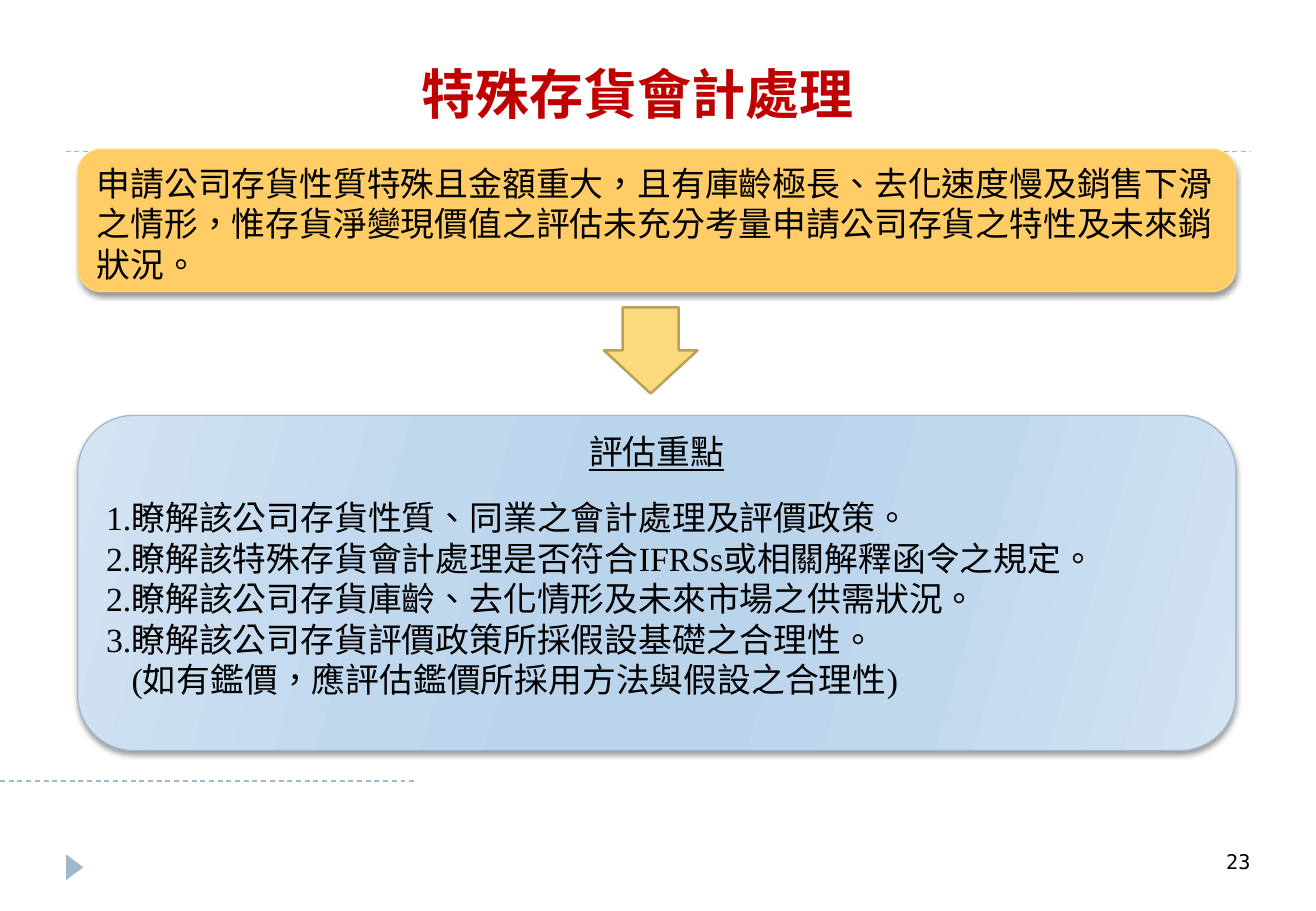
from lxml import etree
from pptx import Presentation
from pptx.dml.color import RGBColor
from pptx.enum.dml import MSO_LINE
from pptx.enum.shapes import MSO_CONNECTOR, MSO_SHAPE
from pptx.enum.text import MSO_ANCHOR, PP_ALIGN
from pptx.oxml import parse_xml
from pptx.oxml.ns import qn
from pptx.util import Inches, Pt

LEFT, CENTER, RIGHT = PP_ALIGN.LEFT, PP_ALIGN.CENTER, PP_ALIGN.RIGHT
TOP, MIDDLE = MSO_ANCHOR.TOP, MSO_ANCHOR.MIDDLE
DASH = MSO_LINE.DASH
STRAIGHT = MSO_CONNECTOR.STRAIGHT
ROUNDED, DOWN_ARROW = MSO_SHAPE.ROUNDED_RECTANGLE, MSO_SHAPE.DOWN_ARROW
TRIANGLE = MSO_SHAPE.ISOSCELES_TRIANGLE

BLACK = RGBColor(0x00, 0x00, 0x00)
RED = RGBColor(0xC0, 0x00, 0x00)
ORANGE = RGBColor(0xFF, 0xCC, 0x66)
YELLOW = RGBColor(0xFA, 0xDA, 0x7A)
BROWN = RGBColor(0xB9, 0xA1, 0x5A)
BLUE = RGBColor(0x9F, 0xB8, 0xCD)
PALE_BLUE = RGBColor(0xD3, 0xE3, 0xF2)
LIGHT_BLUE = RGBColor(0xC0, 0xD8, 0xEE)
MID_BLUE = RGBColor(0xBA, 0xD4, 0xEC)

SANS, SERIF = "Noto Sans CJK SC", "Times New Roman"
NS = 'xmlns:a="http://schemas.openxmlformats.org/drawingml/2006/main"'
SHADOW = (f'<a:effectLst {NS}><a:outerShdw blurRad="38100" dist="25400" '
          'dir="5400000" rotWithShape="0"><a:srgbClr val="000000">'
          '<a:alpha val="40000"/></a:srgbClr></a:outerShdw></a:effectLst>')


def add_text(p, text, font=SANS, size=20, color=BLACK, bold=False,
             underline=False, align=LEFT, spacing=None, after=0, indent=0):
    p.alignment = align
    p.space_after = Pt(after)
    if spacing:
        p.line_spacing = Pt(spacing)
    if indent:
        p._p.get_or_add_pPr().set("marL", str(Inches(indent)))
    r = p.add_run()
    r.text = text
    r.font.name, r.font.size = font, Pt(size)
    r.font.bold, r.font.underline = bold, underline
    r.font.color.rgb = color
    rPr = r._r.get_or_add_rPr()
    rPr.set("lang", "zh-TW")
    etree.SubElement(rPr, qn("a:ea")).set("typeface", SANS)


def add_shape(kind, left, top, width, height, fill, line=None, line_width=0.75):
    sp = s.shapes.add_shape(kind, Inches(left), Inches(top), Inches(width), Inches(height))
    sp.shadow.inherit = False
    sp.fill.solid()
    sp.fill.fore_color.rgb = fill
    if line is None:
        sp.line.fill.background()
    else:
        sp.line.color.rgb = line
        sp.line.width = Pt(line_width)
    return sp


prs = Presentation()
prs.slide_width, prs.slide_height = Inches(10.83), Inches(7.5)
s = prs.slides.add_slide(prs.slide_layouts[5])

for x1, x2, y in [(0, 3.43, 6.43), (0.54, 10.29, 1.25)]:
    rule = s.shapes.add_connector(STRAIGHT, Inches(x1), Inches(y), Inches(x2), Inches(y))
    rule.line.color.rgb = BLUE
    rule.line.width = Pt(0.75)
    rule.line.dash_style = DASH
    etree.SubElement(rule._element.spPr, qn("a:effectLst"))

marker = add_shape(TRIANGLE, 0.51, 7.07, 0.21, 0.14, BLUE)
marker.rotation = 90

title = s.shapes.title
title.left, title.top = Inches(0.53), Inches(0.29)
title.width, title.height = Inches(9.43), Inches(0.95)
title.text_frame.vertical_anchor = MIDDLE
add_text(title.text_frame.paragraphs[0], "特殊存貨會計處理",
         font="TeX Gyre Bonum", size=32, color=RED, bold=True, align=CENTER)

issue = add_shape(ROUNDED, 0.64, 1.23, 9.53, 1.17, ORANGE, YELLOW)
review = add_shape(ROUNDED, 0.64, 3.42, 9.53, 2.76, MID_BLUE, BLUE)

stops = [(0, PALE_BLUE), (30, LIGHT_BLUE), (45, MID_BLUE),
         (55, MID_BLUE), (73, LIGHT_BLUE), (100, PALE_BLUE)]
gradient = "".join(f'<a:gs pos="{pos * 1000}"><a:srgbClr val="{color}"/></a:gs>'
                   for pos, color in stops)
spPr = review._element.spPr
spPr.replace(spPr.find(qn("a:solidFill")), parse_xml(
    f'<a:gradFill {NS} rotWithShape="1"><a:gsLst>{gradient}</a:gsLst>'
    '<a:lin ang="960000" scaled="0"/></a:gradFill>'))

issue_lines = [
    ("申請公司存貨性質特殊且金額重大，且有庫齡極長、去化速度慢及銷售下滑", {}),
    ("之情形，惟存貨淨變現價值之評估未充分考量申請公司存貨之特性及未來銷", {}),
    ("狀況。", {}),
]
review_lines = [
    ("評估重點", {"underline": True, "align": CENTER, "spacing": 20, "after": 15}),
    ("1.瞭解該公司存貨性質、同業之會計處理及評價政策。", {}),
    ("2.瞭解該特殊存貨會計處理是否符合IFRSs或相關解釋函令之規定。", {}),
    ("2.瞭解該公司存貨庫齡、去化情形及未來市場之供需狀況。", {}),
    ("3.瞭解該公司存貨評價政策所採假設基礎之合理性。", {}),
    ("(如有鑑價，應評估鑑價所採用方法與假設之合理性)", {"indent": 0.21}),
]
for sp, font, lines in [(issue, SANS, issue_lines), (review, SERIF, review_lines)]:
    spPr = sp._element.spPr
    spPr.replace(spPr.find(qn("a:effectLst")), parse_xml(SHADOW))
    tf = sp.text_frame
    tf.word_wrap = True
    tf.vertical_anchor = TOP
    for i, (text, fmt) in enumerate(lines):
        p = tf.add_paragraph() if i else tf.paragraphs[0]
        add_text(p, text, **{"font": font, "spacing": 24, **fmt})

arrow = add_shape(DOWN_ARROW, 4.97, 2.53, 0.77, 0.71, YELLOW, BROWN, 1.5)
arrow.adjustments[0] = 0.6

number = s.shapes.add_textbox(Inches(8.95), Inches(6.94), Inches(1.44), Inches(0.4))
number.text_frame.word_wrap = True
add_text(number.text_frame.paragraphs[0], "23", font="DejaVu Sans Mono", size=12, align=RIGHT)

prs.save("out.pptx")
